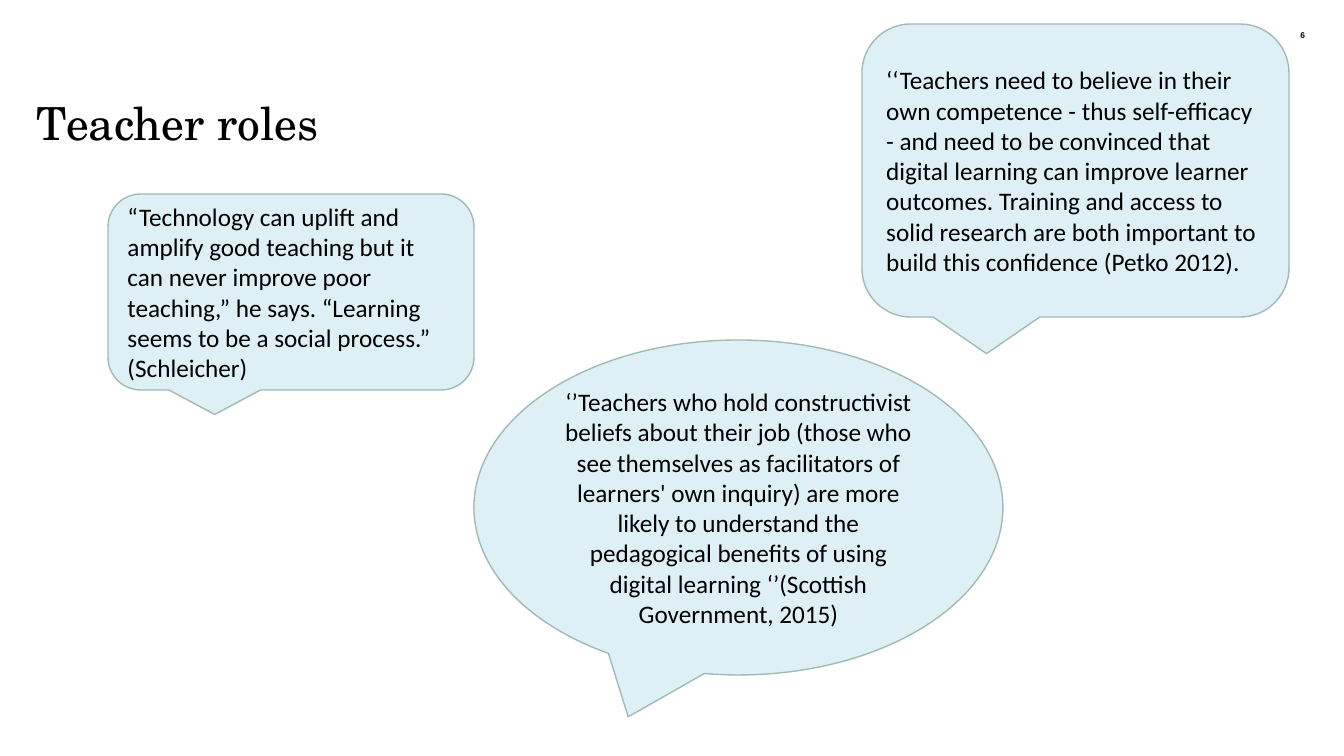
from pptx import Presentation
from pptx.dml.color import RGBColor
from pptx.enum.shapes import MSO_SHAPE
from pptx.enum.text import MSO_ANCHOR, MSO_AUTO_SIZE, PP_ALIGN
from pptx.util import Emu, Pt

EMU_PER_PX = 914400 / 100.8
ROUNDED = MSO_SHAPE.ROUNDED_RECTANGULAR_CALLOUT
OVAL = MSO_SHAPE.OVAL_CALLOUT
LEFT, CENTER, RIGHT = PP_ALIGN.LEFT, PP_ALIGN.CENTER, PP_ALIGN.RIGHT
TOP, MIDDLE = MSO_ANCHOR.TOP, MSO_ANCHOR.MIDDLE
GROW = MSO_AUTO_SIZE.SHAPE_TO_FIT_TEXT
TITLE_ONLY = 5

BLACK, PALE_BLUE, SAGE = "000000", "DEF0F6", "9FBBB5"

CALLOUTS = [
    (ROUNDED, (862, 24, 427, 293), LEFT,
     "‘‘Teachers need to believe in their own competence - thus self-efficacy "
     "- and need to be convinced that digital learning can improve learner "
     "outcomes. Training and access to solid research are both important to "
     "build this confidence (Petko 2012)."),
    (OVAL, (474, 340, 529, 335), CENTER,
     "‘’Teachers who hold constructivist beliefs about their job (those who "
     "see themselves as facilitators of learners' own inquiry) are more likely "
     "to understand the pedagogical benefits of using digital learning "
     "‘’(Scottish Government, 2015)"),
    (ROUNDED, (108, 194, 366, 196), LEFT,
     "“Technology can uplift and amplify good teaching but it can never "
     "improve poor teaching,” he says. “Learning seems to be a social "
     "process.” (Schleicher)"),
]


def px(length):
    return Emu(round(length * EMU_PER_PX))


def color(hex_string):
    return RGBColor.from_string(hex_string)


def write_text(shape, text, font_name, size, alignment, anchor, bold=False):
    frame = shape.text_frame
    frame.word_wrap = True
    frame.vertical_anchor = anchor
    frame.text = text
    paragraph = frame.paragraphs[0]
    paragraph.alignment = alignment
    font = paragraph.font
    font.name = font_name
    font.size = Pt(size)
    font.bold = bold
    font.color.rgb = color(BLACK)
    return paragraph


def remove_margins(frame):
    frame.margin_left = frame.margin_top = 0
    frame.margin_right = frame.margin_bottom = 0


def add_title(slide, text, box):
    title = slide.shapes.title
    title.left, title.top, title.width, title.height = map(px, box)
    remove_margins(title.text_frame)
    title.text_frame.auto_size = GROW
    paragraph = write_text(title, text, "TeX Gyre Schola", 32.5, LEFT, TOP)
    paragraph.line_spacing = 0.9


def add_page_number(slide, text, box):
    number = slide.shapes.add_textbox(*map(px, box))
    remove_margins(number.text_frame)
    write_text(number, text, "Arial", 6, RIGHT, TOP, bold=True)


def add_callout(slide, kind, box, alignment, text):
    callout = slide.shapes.add_shape(kind, *map(px, box))
    callout.shadow.inherit = False
    callout.fill.solid()
    callout.fill.fore_color.rgb = color(PALE_BLUE)
    callout.line.color.rgb = color(SAGE)
    callout.line.width = Pt(1)
    write_text(callout, text, "Calibri", 18, alignment, MIDDLE)


def main():
    presentation = Presentation()
    presentation.slide_width = px(1344)
    presentation.slide_height = px(756)
    slide = presentation.slides.add_slide(presentation.slide_layouts[TITLE_ONLY])
    add_page_number(slide, "6", (1266, 30, 39, 12))
    add_title(slide, "Teacher roles", (37, 101, 1077, 49))
    for kind, box, alignment, text in CALLOUTS:
        add_callout(slide, kind, box, alignment, text)
    presentation.save("out.pptx")


if __name__ == "__main__":
    main()
